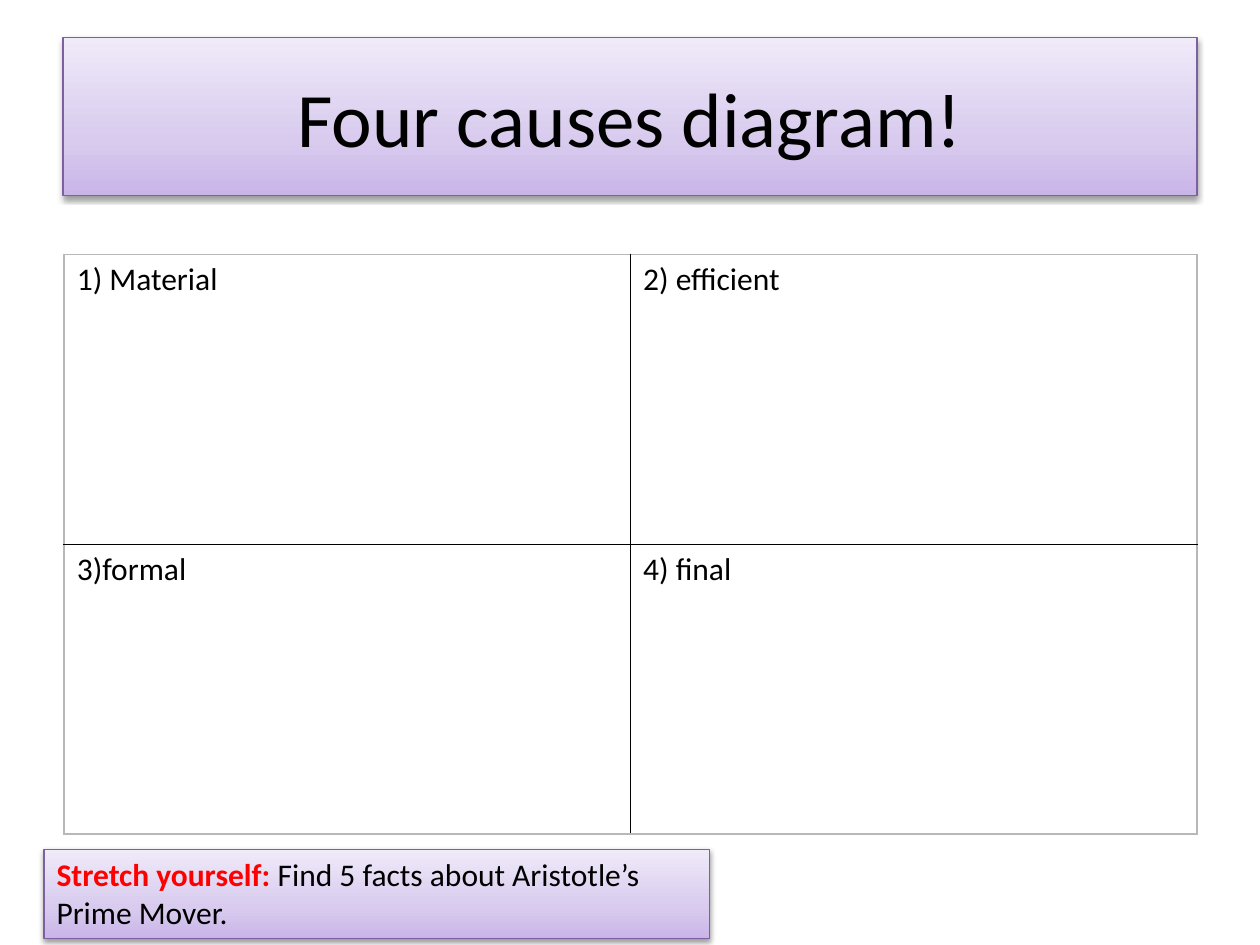
from dataclasses import dataclass

from lxml import etree
from pptx import Presentation
from pptx.dml.color import RGBColor
from pptx.enum.shapes import MSO_SHAPE
from pptx.enum.text import MSO_ANCHOR, PP_ALIGN
from pptx.oxml.ns import qn
from pptx.util import Inches, Pt

RECTANGLE = MSO_SHAPE.RECTANGLE
MIDDLE, TOP = MSO_ANCHOR.MIDDLE, MSO_ANCHOR.TOP
CENTER, LEFT = PP_ALIGN.CENTER, PP_ALIGN.LEFT

COLORS = {
    "text": "000000",
    "accent": "FF0000",
    "outline": "7D60A0",
    "grid": "000000",
    "frame": "B8B8B8",
    "shadow": "000000",
}
GRADIENT = [(0, "C9B5E8"), (35, "D8CBEE"), (100, "F0EAF9")]
CAUSES = [["1) Material", "2) efficient"], ["3)formal", "4) final"]]


@dataclass
class Run:
    text: str
    size: int = 18
    color: str = "text"
    bold: bool = False


@dataclass
class Panel:
    left: float
    top: float
    width: float
    height: float
    runs: list[Run]
    anchor: MSO_ANCHOR = TOP
    align: PP_ALIGN = LEFT


PANELS = [
    Panel(0.5, 0.3, 9, 1.25, [Run("Four causes diagram!", 44)], MIDDLE, CENTER),
    Panel(0.35, 6.74, 5.28, 0.71, [
        Run("Stretch yourself: ", color="accent", bold=True),
        Run("Find 5 facts about Aristotle’s Prime Mover."),
    ]),
]


def add_color(parent, color: str):
    return etree.SubElement(parent, qn("a:srgbClr"), val=color)


def write_runs(paragraph, runs: list[Run]) -> None:
    for item in runs:
        run = paragraph.add_run()
        run.text = item.text
        formats = {"name": "Calibri", "size": Pt(item.size), "bold": item.bold}
        for name, value in formats.items():
            setattr(run.font, name, value)
        run.font.color.rgb = RGBColor.from_string(COLORS[item.color])


def fill_gradient(shape) -> None:
    shape.fill.gradient()
    shape.fill.gradient_angle = 90
    stops = shape._element.spPr.find(".//" + qn("a:gsLst"))
    for stop in list(stops):
        stops.remove(stop)
    for position, color in GRADIENT:
        add_color(etree.SubElement(stops, qn("a:gs"), pos=str(position * 1000)), color)


def add_shadow(shape) -> None:
    shape.shadow.inherit = False
    effects = shape._element.spPr.find(qn("a:effectLst"))
    shadow = etree.SubElement(effects, qn("a:outerShdw"), blurRad="40000",
                              dist="20000", dir="5400000", rotWithShape="0")
    etree.SubElement(add_color(shadow, COLORS["shadow"]), qn("a:alpha"), val="38000")


def add_panel(slide, panel: Panel) -> None:
    shape = slide.shapes.add_shape(
        RECTANGLE, Inches(panel.left), Inches(panel.top),
        Inches(panel.width), Inches(panel.height))
    fill_gradient(shape)
    shape.line.color.rgb = RGBColor.from_string(COLORS["outline"])
    shape.line.width = Pt(0.75)
    add_shadow(shape)
    frame = shape.text_frame
    formats = {"word_wrap": True, "vertical_anchor": panel.anchor}
    for name, value in formats.items():
        setattr(frame, name, value)
    paragraph = frame.paragraphs[0]
    paragraph.alignment = panel.align
    write_runs(paragraph, panel.runs)


def set_borders(cell, borders: dict[str, str]) -> None:
    properties = cell._tc.get_or_add_tcPr()
    for index, (side, color) in enumerate(borders.items()):
        line = etree.Element(qn(f"a:ln{side}"), w=str(Pt(1)))
        add_color(etree.SubElement(line, qn("a:solidFill")), COLORS[color])
        properties.insert(index, line)


def add_causes_table(slide) -> None:
    rows, columns = len(CAUSES), len(CAUSES[0])
    table = slide.shapes.add_table(
        rows, columns, Inches(0.51), Inches(2.02), Inches(8.99), Inches(4.6)).table
    for name in ("first_row", "horz_banding"):
        setattr(table, name, False)
    for row, texts in enumerate(CAUSES):
        for column, text in enumerate(texts):
            cell = table.cell(row, column)
            cell.fill.background()
            outer = {"L": column == 0, "R": column == columns - 1,
                     "T": row == 0, "B": row == rows - 1}
            set_borders(cell, {side: "frame" if edge else "grid"
                               for side, edge in outer.items()})
            write_runs(cell.text_frame.paragraphs[0], [Run(text)])


def main() -> None:
    presentation = Presentation()
    presentation.slide_width, presentation.slide_height = Inches(10), Inches(7.5)
    slide = presentation.slides.add_slide(presentation.slide_layouts[6])
    title, stretch_task = PANELS

    # Title banner
    add_panel(slide, title)
    # Grid of the four causes
    add_causes_table(slide)
    # Extension task
    add_panel(slide, stretch_task)

    presentation.save("out.pptx")


if __name__ == "__main__":
    main()
